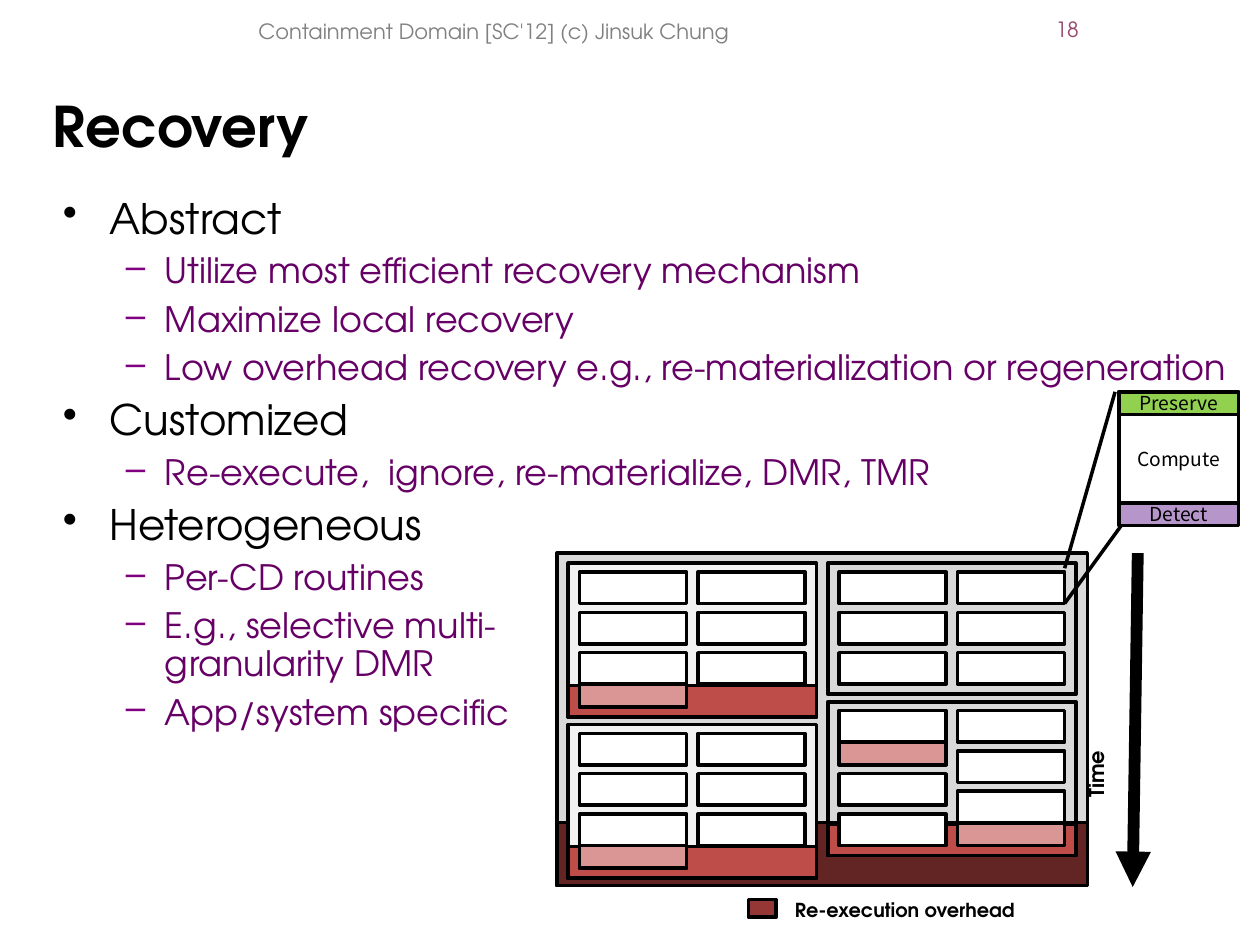
"""Build the slide on recovery in containment domains, with its nested domain diagram."""
import pptx
import pptx.util
import pptx.dml.color
import pptx.enum.shapes
import pptx.enum.text
import pptx.oxml

Inches, Pt = pptx.util.Inches, pptx.util.Pt
RGB = pptx.dml.color.RGBColor
ALIGN, ANCHOR = pptx.enum.text.PP_ALIGN, pptx.enum.text.MSO_ANCHOR

BLACK, WHITE = RGB(0, 0, 0), RGB(255, 255, 255)
PURPLE, GRAY, PLUM = RGB(0x66, 0, 0x66), RGB(0x80, 0x80, 0x80), RGB(0x94, 0x47, 0x6B)
BULLET_PURPLE = RGB(0x80, 0, 0x80)
GREEN, LILAC = RGB(0x92, 0xD0, 0x50), RGB(0xB6, 0x96, 0xCA)
ROOT_GRAY, DOMAIN_GRAY = RGB(0xD9, 0xD9, 0xD9), RGB(0xF2, 0xF2, 0xF2)
ROOT_RED, DOMAIN_RED = RGB(0x63, 0x25, 0x23), RGB(0xBE, 0x4D, 0x4A)
CELL_PINK, LEGEND_RED = RGB(0xD9, 0x96, 0x94), RGB(0x95, 0x37, 0x35)
SANS, LABEL_FONT = "TeX Gyre Adventor", "Noto Sans CJK KR"

OUTLINE = [
    ("Abstract", [
        "Utilize most efficient recovery mechanism",
        "Maximize local recovery",
        "Low overhead recovery e.g., re-materialization or regeneration"]),
    ("Customized", ["Re-execute,  ignore, re-materialize, DMR, TMR"]),
    ("Heterogeneous", [
        "Per-CD routines",
        "E.g., selective multi-\ngranularity DMR",
        "App/system specific"]),
]
LEVELS = [
    dict(size=24, color=BLACK, bullet="•", bullet_color=BLACK, left=0.37, hang=0.37, before=6.5),
    dict(size=20, color=PURPLE, bullet="–", bullet_color=BULLET_PURPLE, left=0.81, hang=0.31, before=6),
]

CELL_W, CELL_H, RETRY_H = 0.85, 0.25, 0.18
COL_STEP, GAP, MARGIN = 0.94, 0.07, 0.09
DOMAIN_W, DOMAIN_RETRY_H = 1.97, 0.25
ROOT = (4.42, 4.39, 4.21, 2.64)
ROOT_RETRY_H = 0.5
LEFT_X, RIGHT_X = 4.51, 6.57
OK, RETRY = False, True
DOMAINS = [
    (LEFT_X, 4.47, DOMAIN_GRAY, [[OK, OK, RETRY], [OK, OK, OK]]),
    (LEFT_X, 5.75, DOMAIN_GRAY, [[OK, OK, RETRY], [OK, OK, OK]]),
    (RIGHT_X, 4.47, None, [[OK, OK, OK], [OK, OK, OK]]),
    (RIGHT_X, 5.57, None, [[RETRY, OK, OK], [OK, OK, RETRY]]),
]
DETAIL = (8.88, 3.11, 0.95, 1.06)
BAND_H = 0.18
ZOOM_LINES = [((8.45, 4.51), (8.85, 3.11)), ((8.45, 4.79), (8.9, 4.17))]

deck = pptx.Presentation()
deck.slide_width, deck.slide_height = Inches(10), Inches(7.5)
slide = deck.slides.add_slide(deck.slide_layouts[6])


def write(paragraph, text, *, size, color=BLACK, font=SANS, bold=False, align=ALIGN.LEFT):
    paragraph.text = text
    paragraph.alignment = align
    for run in paragraph.runs:
        run.font.size, run.font.name, run.font.bold = Pt(size), font, bold
        run.font.color.rgb = color


def text_box(box, inset=(0.1, 0.05), anchor=ANCHOR.TOP):
    holder = slide.shapes.add_textbox(*map(Inches, box))
    frame = holder.text_frame
    frame.word_wrap = True
    frame.vertical_anchor = anchor
    frame.margin_left = frame.margin_right = Inches(inset[0])
    frame.margin_top = frame.margin_bottom = Inches(inset[1])
    return holder


def block(box, fill, label=""):
    rect = slide.shapes.add_shape(pptx.enum.shapes.MSO_SHAPE.RECTANGLE, *map(Inches, box))
    rect.shadow.inherit = False
    if fill is None:
        rect.fill.background()
    else:
        rect.fill.solid()
        rect.fill.fore_color.rgb = fill
    rect.line.color.rgb = BLACK
    rect.line.width = Pt(2)
    if label:
        frame = rect.text_frame
        frame.margin_top = frame.margin_bottom = 0
        frame.vertical_anchor = ANCHOR.MIDDLE
        write(frame.paragraphs[0], label, size=11, font=LABEL_FONT, align=ALIGN.CENTER)


def line(start, end, width, arrow=False):
    connector = slide.shapes.add_connector(
        pptx.enum.shapes.MSO_CONNECTOR.STRAIGHT, *map(Inches, (*start, *end)))
    connector.line.color.rgb = BLACK
    connector.line.width = Pt(width)
    if arrow:
        head = pptx.oxml.parse_xml(
            f'<a:tailEnd {pptx.oxml.ns.nsdecls("a")} type="triangle"/>')
        connector.line._get_or_add_ln().append(head)
    connector._element.spPr.append(
        pptx.oxml.parse_xml(f'<a:effectLst {pptx.oxml.ns.nsdecls("a")}/>'))


def bottom_strip(box, height):
    x, y, w, h = box
    return x, y + h - height, w, height


def outline_item(paragraph, text, level, first):
    style = LEVELS[level]
    props = paragraph._p.get_or_add_pPr()
    props.set("marL", str(Inches(style["left"])))
    props.set("indent", str(-Inches(style["hang"])))
    ns = pptx.oxml.ns.nsdecls("a")
    props.append(pptx.oxml.parse_xml(
        f'<a:buClr {ns}><a:srgbClr val="{style["bullet_color"]}"/></a:buClr>'))
    props.append(pptx.oxml.parse_xml(f'<a:buChar {ns} char="{style["bullet"]}"/>'))
    paragraph.level = level
    paragraph.line_spacing = 0.9
    paragraph.space_before = Pt(0 if first else style["before"])
    write(paragraph, text, size=style["size"], color=style["color"])


def draw_domain(x, y, fill, columns):
    retried = any(map(any, columns))
    height = 1.04 + (RETRY_H if retried else 0)
    frame = (x, y, DOMAIN_W, height)
    block(frame, fill)
    if retried:
        block(bottom_strip(frame, DOMAIN_RETRY_H), DOMAIN_RED)
    for col, cells in enumerate(columns):
        top = y + GAP
        for retry in cells:
            cell = (x + MARGIN + col * COL_STEP, top, CELL_W, CELL_H + retry * RETRY_H)
            block(cell, WHITE)
            if retry:
                block(bottom_strip(cell, RETRY_H), CELL_PINK)
            top += cell[3] + GAP


title = text_box((0.42, 0.5, 9.41, 0.98), inset=(0, 0), anchor=ANCHOR.MIDDLE).text_frame
write(title.paragraphs[0], "Recovery", size=32, bold=True)

body = text_box((0.5, 1.57, 9.33, 5.91), inset=(0, 0)).text_frame
items = [(text, level) for topic, points in OUTLINE
         for text, level in [(topic, 0)] + [(point, 1) for point in points]]
for index, (text, level) in enumerate(items):
    paragraph = body.add_paragraph() if index else body.paragraphs[0]
    outline_item(paragraph, text, level, first=index == 0)

header = text_box((0.92, 0, 6, 0.5), anchor=ANCHOR.MIDDLE).text_frame
write(header.paragraphs[0], "Containment Domain [SC'12] (c) Jinsuk Chung",
      size=12, color=GRAY, align=ALIGN.CENTER)
page = text_box((7.75, -0.02, 0.91, 0.5), anchor=ANCHOR.MIDDLE).text_frame
write(page.paragraphs[0], "18", size=12, color=PLUM, align=ALIGN.RIGHT)

block(DETAIL, WHITE, "Compute")
block((*DETAIL[:3], BAND_H), GREEN, "Preserve")
block(bottom_strip(DETAIL, BAND_H), LILAC, "Detect")

block(ROOT, ROOT_GRAY)
block(bottom_strip(ROOT, ROOT_RETRY_H), ROOT_RED)
for domain in DOMAINS:
    draw_domain(*domain)
for start, end in ZOOM_LINES:
    line(start, end, 2)

line((9.03, 4.39), (8.99, 7.04), 6.75, arrow=True)
time_label = text_box((8.55, 5.61, 0.5, 0.82))
time_label.rotation = 180
time_label.text_frame._txBody.bodyPr.set("vert", "eaVert")
write(time_label.text_frame.paragraphs[0], "Time", size=12, bold=True)

block((5.94, 7.14, 0.22, 0.14), LEGEND_RED)
legend = text_box((6.21, 7.08, 2.69, 0.37)).text_frame
write(legend.paragraphs[0], "Re-execution overhead", size=11, bold=True)

deck.save("out.pptx")
